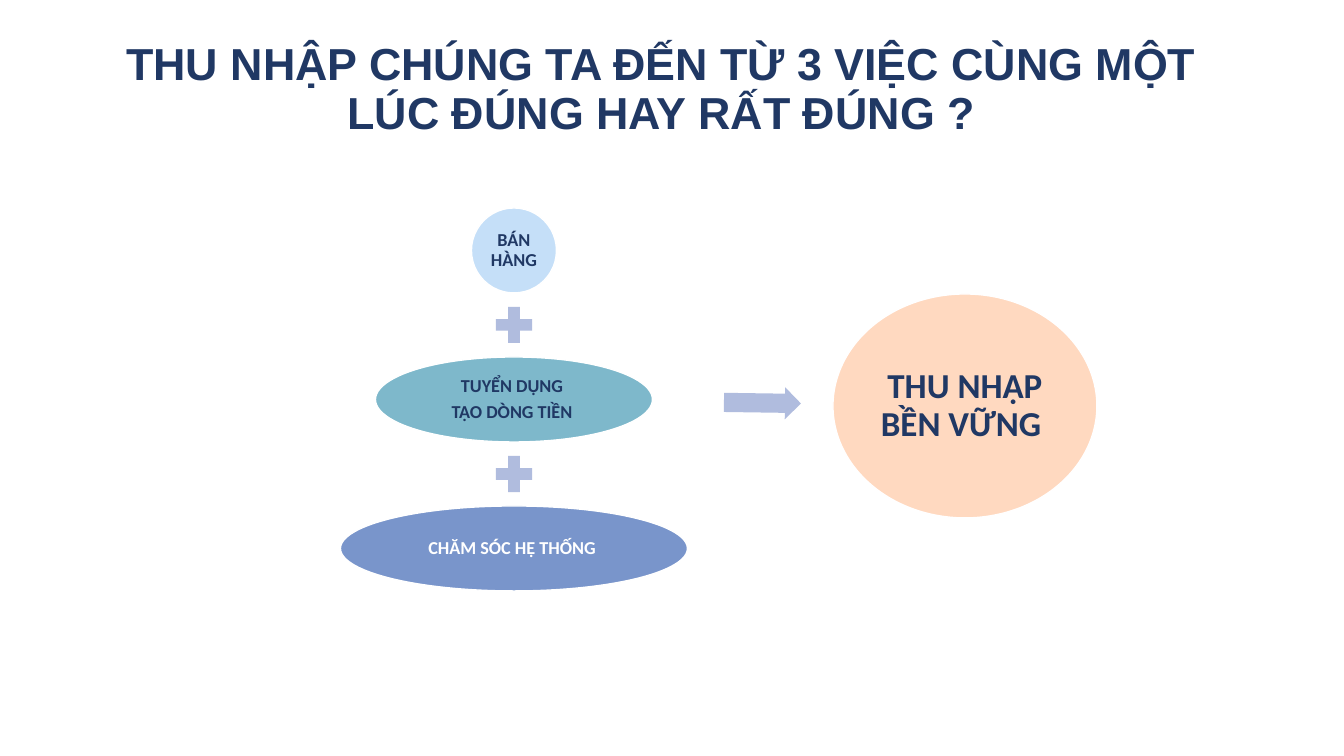
from pptx import Presentation
from pptx.dml.color import RGBColor
from pptx.enum.shapes import MSO_SHAPE
from pptx.enum.text import MSO_ANCHOR, PP_ALIGN
from pptx.util import Pt

OVAL = MSO_SHAPE.OVAL
PLUS = MSO_SHAPE.MATH_PLUS
ARROW = MSO_SHAPE.RIGHT_ARROW
MIDDLE = MSO_ANCHOR.MIDDLE
CENTER = PP_ALIGN.CENTER

NAVY, WHITE, LILAC = "203864", "FFFFFF", "B0BCDE"

TITLE = "THU NHẬP CHÚNG TA ĐẾN TỪ 3 VIỆC CÙNG MỘT LÚC ĐÚNG HAY RẤT ĐÚNG ?"
# width, fill, text colour, paragraphs
SOURCES = [
    (85, "C5DFF8", NAVY, ["BÁN HÀNG"]),
    (277, "7EB8CB", NAVY, ["TUYỂN DỤNG ", "TẠO DÒNG TIỀN "]),
    (347, "7995CB", WHITE, ["CHĂM SÓC HỆ THỐNG "]),
]
RESULT = ["THU NHẬP BỀN VỮNG "]

SLIDE_W, SLIDE_H = 1344, 756
EMU_PER_PX = 914400 / 100.8
AXIS_X, FIRST_Y, PITCH = 514, 208, 149
OVAL_H, PLUS_SIZE = 85, 49


def px(n):
    return round(n * EMU_PER_PX)


def rgb(value):
    return RGBColor.from_string(value)


def write(sp, lines, size, font, color, inset, after=0):
    tf = sp.text_frame
    tf.word_wrap = True
    tf.vertical_anchor = MIDDLE
    tf.margin_left = tf.margin_right = tf.margin_top = tf.margin_bottom = px(inset)
    for i, line in enumerate(lines):
        p = tf.paragraphs[0] if i == 0 else tf.add_paragraph()
        p.text = line
        p.alignment = CENTER
        p.line_spacing = 0.9
        p.space_after = Pt(after)
        p.font.size = Pt(size)
        p.font.name = font
        p.font.bold = True
        p.font.color.rgb = rgb(color)


def add_shape(kind, x, y, w, h, fill):
    sp = slide.shapes.add_shape(kind, px(x), px(y), px(w), px(h))
    sp.shadow.inherit = False
    sp.fill.solid()
    sp.fill.fore_color.rgb = rgb(fill)
    sp.line.fill.background()
    return sp


def add_oval(x, y, w, h, fill, lines, size, color, inset, after):
    sp = add_shape(OVAL, x, y, w, h, fill)
    sp.line.color.rgb = rgb(WHITE)
    sp.line.width = Pt(1)
    write(sp, lines, size, "Calibri", color, inset, after)


prs = Presentation()
prs.slide_width, prs.slide_height = px(SLIDE_W), px(SLIDE_H)
slide = prs.slides.add_slide(prs.slide_layouts[6])

title = slide.shapes.add_textbox(px(112), px(31), px(1099), px(119))
write(title, [TITLE], 32, "Arial", NAVY, 10)

for i, (width, fill, color, lines) in enumerate(SOURCES):
    top = FIRST_Y + i * PITCH
    if i:
        plus_y = top + (OVAL_H - PITCH - PLUS_SIZE) / 2
        add_shape(PLUS, AXIS_X - PLUS_SIZE / 2, plus_y, PLUS_SIZE, PLUS_SIZE, LILAC)
    add_oval(AXIS_X - width / 2, top, width, OVAL_H, fill, lines, 13, color, 2, 4.5)

arrow = add_shape(ARROW, 724, 387, 77, 32, LILAC)
arrow.adjustments[0] = 0.6
arrow.adjustments[1] = 0.5
arrow.rotation = 0.8

add_oval(833, 294, 264, 224, "FFD9C0", RESULT, 25, NAVY, 3, 9)

prs.save("out.pptx")
